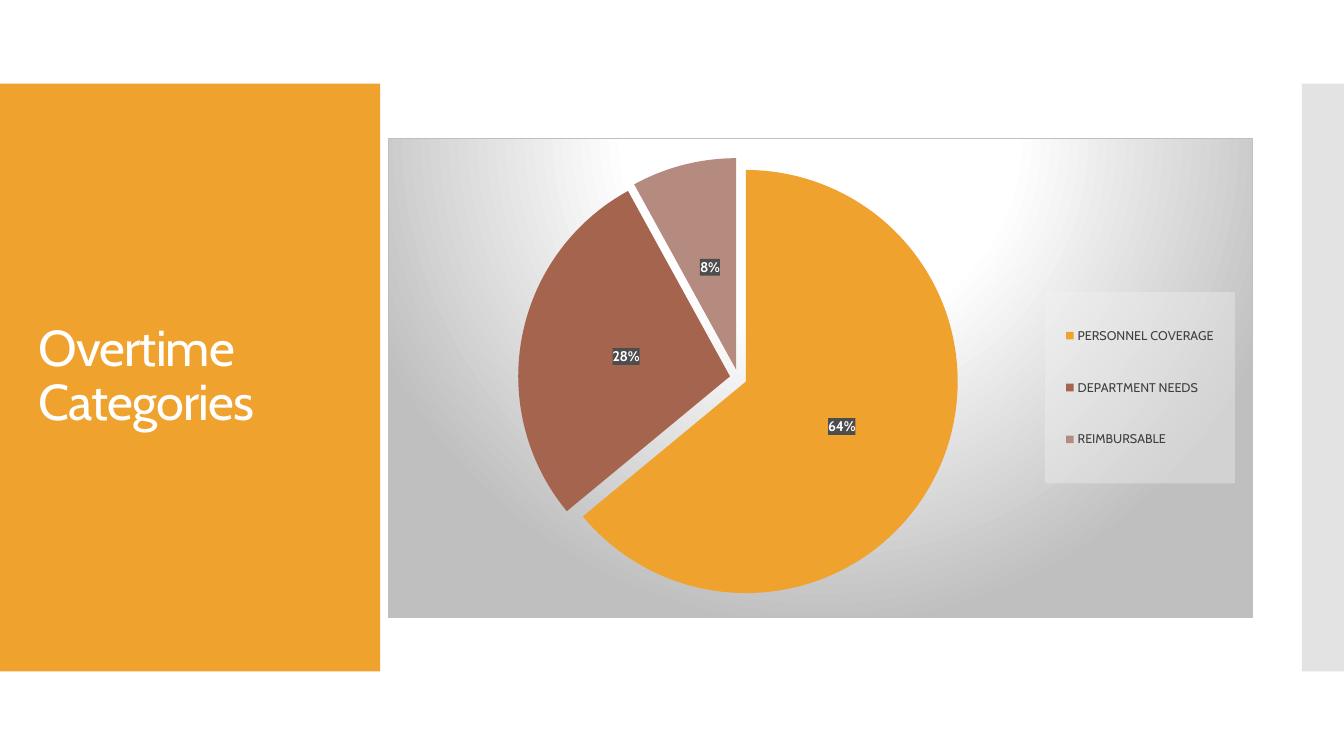
from pptx import Presentation
from pptx.chart.data import CategoryChartData
from pptx.dml.color import RGBColor
from pptx.enum.chart import XL_CHART_TYPE, XL_LABEL_POSITION, XL_LEGEND_POSITION
from pptx.enum.shapes import MSO_SHAPE
from pptx.enum.text import MSO_ANCHOR, PP_ALIGN
from pptx.oxml import parse_xml
from pptx.oxml.ns import nsdecls, qn
from pptx.util import Cm, Pt

PIE = XL_CHART_TYPE.PIE
RECT = MSO_SHAPE.RECTANGLE
ORANGE = RGBColor(0xF0, 0xA2, 0x2E)
BROWN = RGBColor(0xA5, 0x64, 0x4E)
ROSE = RGBColor(0xB5, 0x8B, 0x80)
PALE_GRAY = RGBColor(0xE3, 0xE3, 0xE3)
DARK_GRAY = RGBColor(0x40, 0x40, 0x40)
BLACK = RGBColor(0, 0, 0)
WHITE = RGBColor(0xFF, 0xFF, 0xFF)
FONT = "Cabin"
NS = nsdecls("c", "a")


def set_font(font, size, color, bold=False):
    font.name, font.size, font.bold = FONT, Pt(size), bold
    font.color.rgb = color


def layout_xml(x, y, w, h, target=""):
    return parse_xml(
        f'<c:layout {NS}><c:manualLayout>{target}'
        '<c:xMode val="edge"/><c:yMode val="edge"/>'
        f'<c:x val="{x}"/><c:y val="{y}"/><c:w val="{w}"/><c:h val="{h}"/>'
        '</c:manualLayout></c:layout>')


prs = Presentation()
prs.slide_width, prs.slide_height = Cm(33.87), Cm(19.05)
s = prs.slides.add_slide(prs.slide_layouts[5])
title = s.shapes.title

# Side panels, behind the title
for left, width, color in ((0, 9.58, ORANGE), (32.81, 1.06, PALE_GRAY)):
    panel = s.shapes.add_shape(RECT, Cm(left), Cm(2.11), Cm(width), Cm(14.81))
    panel.shadow.inherit = False
    panel.fill.solid()
    panel.fill.fore_color.rgb = color
    panel.line.fill.background()
    title.element.addprevious(panel.element)

# Title
title.left, title.top, title.width, title.height = Cm(0.71), Cm(3.12), Cm(8.18), Cm(12.78)
tf = title.text_frame
tf.text = "Overtime Categories"
tf.word_wrap = True
tf.vertical_anchor = MSO_ANCHOR.MIDDLE
p = tf.paragraphs[0]
p.alignment = PP_ALIGN.LEFT
p.line_spacing = 0.9
set_font(p.font, 36, WHITE)
p.runs[0].font.element.set("spc", "-60") if hasattr(p.runs[0].font, "element") else \
    p.runs[0]._r.get_or_add_rPr().set("spc", "-60")

# Pie chart
data = CategoryChartData(number_format="0")
data.categories = ["PERSONNEL COVERAGE", "DEPARTMENT NEEDS", "REIMBURSABLE"]
data.add_series("Series 1", (64, 28, 8))
chart = s.shapes.add_chart(PIE, Cm(9.78), Cm(3.48), Cm(21.79), Cm(12.09), data).chart
set_font(chart.font, 10, BLACK)
chart.has_title = False
plot = chart.plots[0]
plot.vary_by_categories = True
series = plot.series[0]
for i, color in enumerate((ORANGE, BROWN, ROSE)):
    fill = series.points[i].format.fill
    fill.solid()
    fill.fore_color.rgb = color

# Slices pulled apart
ser = series._element
ser.find(qn("c:dPt")).addprevious(parse_xml(f'<c:explosion {NS} val="4"/>'))

# Percentage labels on dark boxes
labels = series.data_labels
labels.show_percentage = True
labels.show_value = False
labels.number_format, labels.number_format_is_linked = "0%", False
labels.position = XL_LABEL_POSITION.CENTER
set_font(labels.font, 10, WHITE, bold=True)
labels._element.find(qn("c:txPr")).addprevious(parse_xml(
    f'<c:spPr {NS}><a:solidFill><a:srgbClr val="4D4D4D"/></a:solidFill></c:spPr>'))

# Legend on a translucent box
chart.has_legend = True
legend = chart.legend
legend.position = XL_LEGEND_POSITION.RIGHT
legend.include_in_layout = False
set_font(legend.font, 9, DARK_GRAY)
box = legend._element
for old in box.findall(qn("c:layout")):
    box.remove(old)
box.find(qn("c:overlay")).addprevious(layout_xml(0.76, 0.32, 0.22, 0.4))
box.find(qn("c:txPr")).addprevious(parse_xml(
    f'<c:spPr {NS}><a:solidFill><a:srgbClr val="F2F2F2"><a:alpha val="39000"/>'
    '</a:srgbClr></a:solidFill></c:spPr>'))

# Plot position
area = chart._chartSpace.chart.plotArea
for old in area.findall(qn("c:layout")):
    area.remove(old)
area.insert(0, layout_xml(0.15, 0.04, 0.51, 0.92, '<c:layoutTarget val="inner"/>'))

# Radial gradient background and border
stops = "".join(f'<a:gs pos="{pos}000"><a:srgbClr val="{color}"/></a:gs>'
                for pos, color in ((0, WHITE), (39, WHITE), (100, "BFBFBF")))
chart._chartSpace.find(qn("c:txPr")).addprevious(parse_xml(
    f'<c:spPr {NS}><a:gradFill><a:gsLst>{stops}</a:gsLst><a:path path="circle">'
    '<a:fillToRect l="50000" t="-80000" r="50000" b="180000"/></a:path></a:gradFill>'
    '<a:ln w="9525"><a:solidFill><a:srgbClr val="BFBFBF"/></a:solidFill></a:ln></c:spPr>'))

prs.save("out.pptx")
